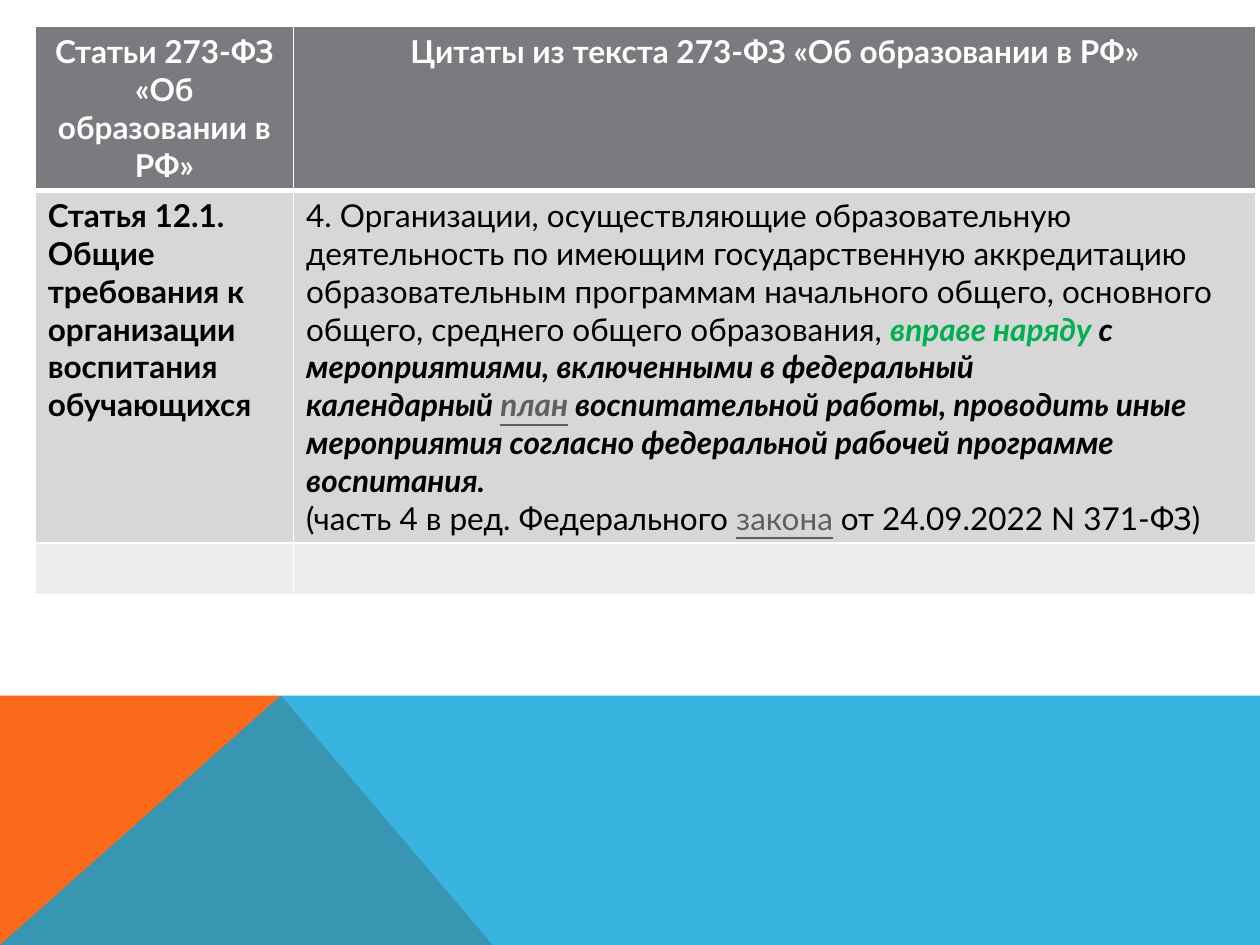
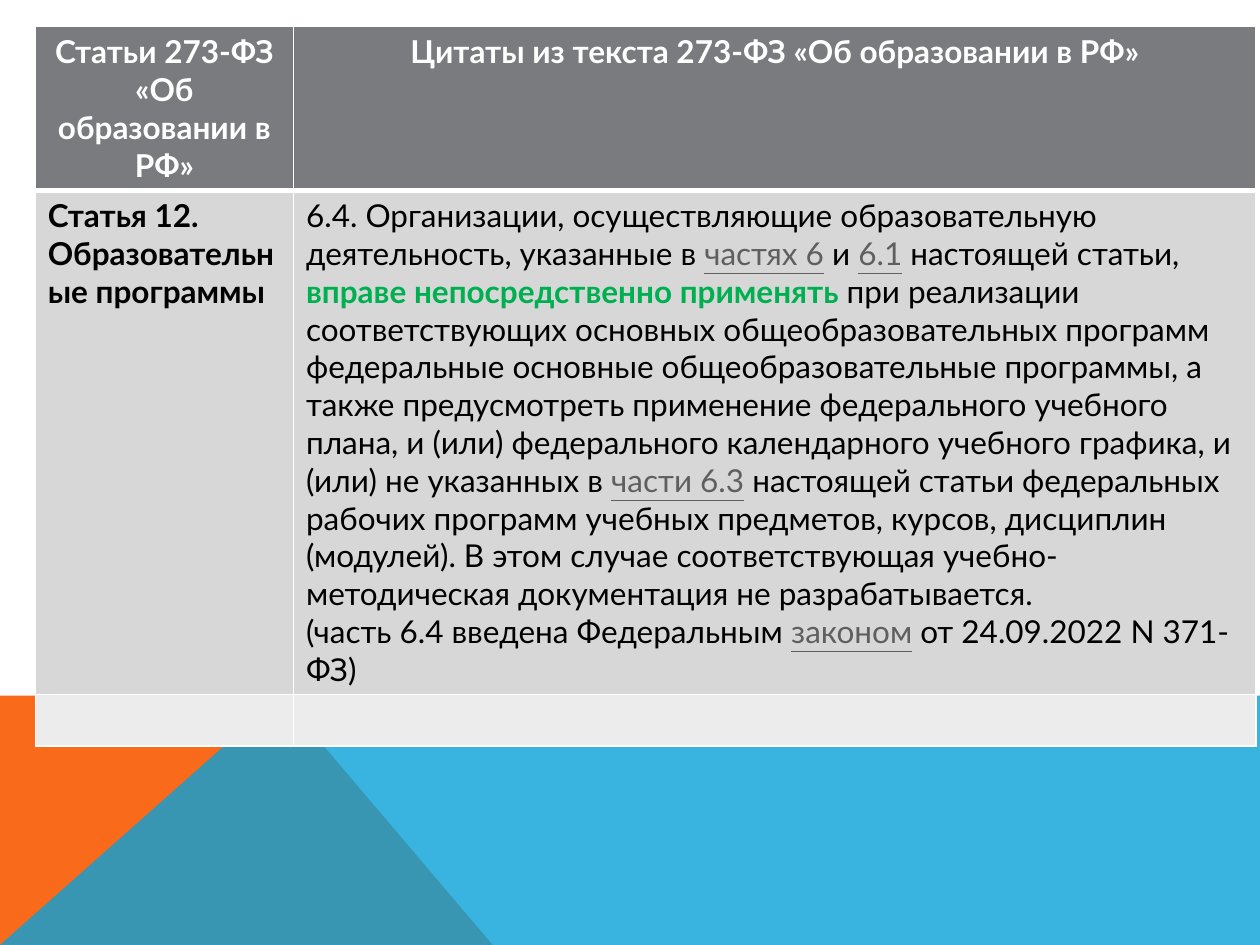
from lxml.etree import SubElement
from pptx import Presentation
from pptx.dml.color import RGBColor
from pptx.enum.text import PP_ALIGN
from pptx.oxml.ns import qn
from pptx.util import Inches, Pt

WHITE = RGBColor(0xFF, 0xFF, 0xFF)
BLACK = RGBColor(0x00, 0x00, 0x00)
ORANGE = RGBColor(0xF9, 0x6A, 0x1B)
BLUE = RGBColor(0x08, 0xA1, 0xD9)
GREEN = RGBColor(0x00, 0xB0, 0x50)
LINK = RGBColor(0x5F, 0x5F, 0x5F)
FILLS = [RGBColor(0x79, 0x7B, 0x7E), RGBColor(0xD7, 0xD7, 0xD8), RGBColor(0xEC, 0xEC, 0xEC)]

FONT, SIZE = "Lato", 18
WIDE, HIGH = 10, 7.5
LEFT, TOP = 0.28, 0.21
COLS = [2.05, 7.64]
ROW = 0.41
PEAK, EDGE, FOOT = 2.23, 5.52, 3.91

# Style keys: b bold, i italic, g green, u link, h header; "~" is a non-breaking space.
HEAD = [
    [[("Статьи 273-ФЗ «Об образовании в РФ»", "bh")]],
    [[("Цитаты из текста 273-ФЗ «Об образовании в РФ»", "bh")]],
]
PAGES = [
    {
        "high": 4.21,
        "name": "Статья 12.1. Общие требования к организации воспитания обучающихся",
        "quote": [
            [
                ("4. Организации, осуществляющие образовательную деятельность по имеющим "
                 "государственную аккредитацию образовательным программам начального общего, "
                 "основного общего, среднего общего образования, ", ""),
                ("вправе наряду ", "big"),
                ("с мероприятиями, включенными в федеральный календарный~", "bi"),
                ("план", "biu"),
                ("~воспитательной работы, проводить иные мероприятия согласно "
                 "федеральной рабочей программе воспитания.", "bi"),
            ],
            [
                ("(часть 4 в ред. Федерального~", ""),
                ("закона", "u"),
                ("~от 24.09.2022 N 371-ФЗ)", ""),
            ],
        ],
    },
    {
        "high": 5.41,
        "name": "Статья 12. Образовательные программы",
        "quote": [
            [
                ("6.4. Организации, осуществляющие образовательную деятельность, указанные в~", ""),
                ("частях 6", "u"),
                ("~и~", ""),
                ("6.1", "u"),
                ("~настоящей статьи, ", ""),
                ("вправе непосредственно применять ", "bg"),
                ("при реализации соответствующих основных общеобразовательных программ "
                 "федеральные основные общеобразовательные программы, а также предусмотреть "
                 "применение федерального учебного плана, и (или) федерального календарного "
                 "учебного графика, и (или) не указанных в~", ""),
                ("части 6.3", "u"),
                ("~настоящей статьи федеральных рабочих программ учебных предметов, курсов, "
                 "дисциплин (модулей). В этом случае соответствующая учебно-методическая "
                 "документация не разрабатывается.", ""),
            ],
            [
                ("(часть 6.4 введена Федеральным~", ""),
                ("законом", "u"),
                ("~от 24.09.2022 N 371-ФЗ)", ""),
            ],
        ],
    },
]
BANDS = [
    ([(0, HIGH), (0, EDGE), (PEAK, EDGE), (FOOT, HIGH)], ORANGE, 100),
    ([(0, HIGH), (PEAK, EDGE), (WIDE, EDGE), (WIDE, HIGH)], BLUE, 80),
]
INKS = {"g": GREEN, "u": LINK, "h": WHITE}


def add_bands(slide):
    for points, color, alpha in BANDS:
        first, *rest = [(Inches(x), Inches(y)) for x, y in points]
        pen = slide.shapes.build_freeform(*first)
        pen.add_line_segments(rest, close=True)
        band = pen.convert_to_shape()
        band.shadow.inherit = False
        band.line.fill.background()
        band.fill.solid()
        band.fill.fore_color.rgb = color
        tint = next(band.element.spPr.iter(qn("a:srgbClr")))
        SubElement(tint, qn("a:alpha"), val=str(alpha * 1000))
        slide.slide_layout.shapes.element.append(band.element)


def add_lines(cell, base):
    props = cell._tc.get_or_add_tcPr()
    for side, points in zip("LRTB", (1, 1, 1, base)):
        line = SubElement(props, qn("a:ln" + side), w=str(Pt(points)))
        fill = SubElement(line, qn("a:solidFill"))
        SubElement(fill, qn("a:srgbClr"), val=str(WHITE))


def write(frame, paras):
    for i, parts in enumerate(paras):
        para = frame.paragraphs[0] if i == 0 else frame.add_paragraph()
        for text, style in parts:
            run = para.add_run()
            run.text = text.replace("~", chr(160))
            font = run.font
            font.name, font.size = FONT, Pt(SIZE)
            font.bold, font.italic = "b" in style, "i" in style
            font.underline = "u" in style
            font.color.rgb = next((INKS[key] for key in style if key in INKS), BLACK)
            if "h" in style:
                para.alignment = PP_ALIGN.CENTER


def add_grid(slide, page):
    rows = [HEAD, [[[(page["name"], "b")]], page["quote"]], [[], []]]
    frame = slide.shapes.add_table(
        len(rows), len(COLS), Inches(LEFT), Inches(TOP),
        Inches(sum(COLS)), Inches(page["high"]))
    table = frame.table
    for col, width in zip(table.columns, COLS):
        col.width = Inches(width)
    for r, row in enumerate(rows):
        table.rows[r].height = Inches(ROW)
        for c, paras in enumerate(row):
            cell = table.cell(r, c)
            add_lines(cell, 3 if r == 0 else 1)
            cell.fill.solid()
            cell.fill.fore_color.rgb = FILLS[r]
            write(cell.text_frame, paras)
    frame.height = Inches(page["high"])


def main():
    deck = Presentation()
    deck.slide_width, deck.slide_height = Inches(WIDE), Inches(HIGH)
    blank = deck.slide_layouts[6]
    for i, page in enumerate(PAGES):
        slide = deck.slides.add_slide(blank)
        if i == 0:
            add_bands(slide)
        add_grid(slide, page)
    deck.save("out.pptx")


if __name__ == "__main__":
    main()
